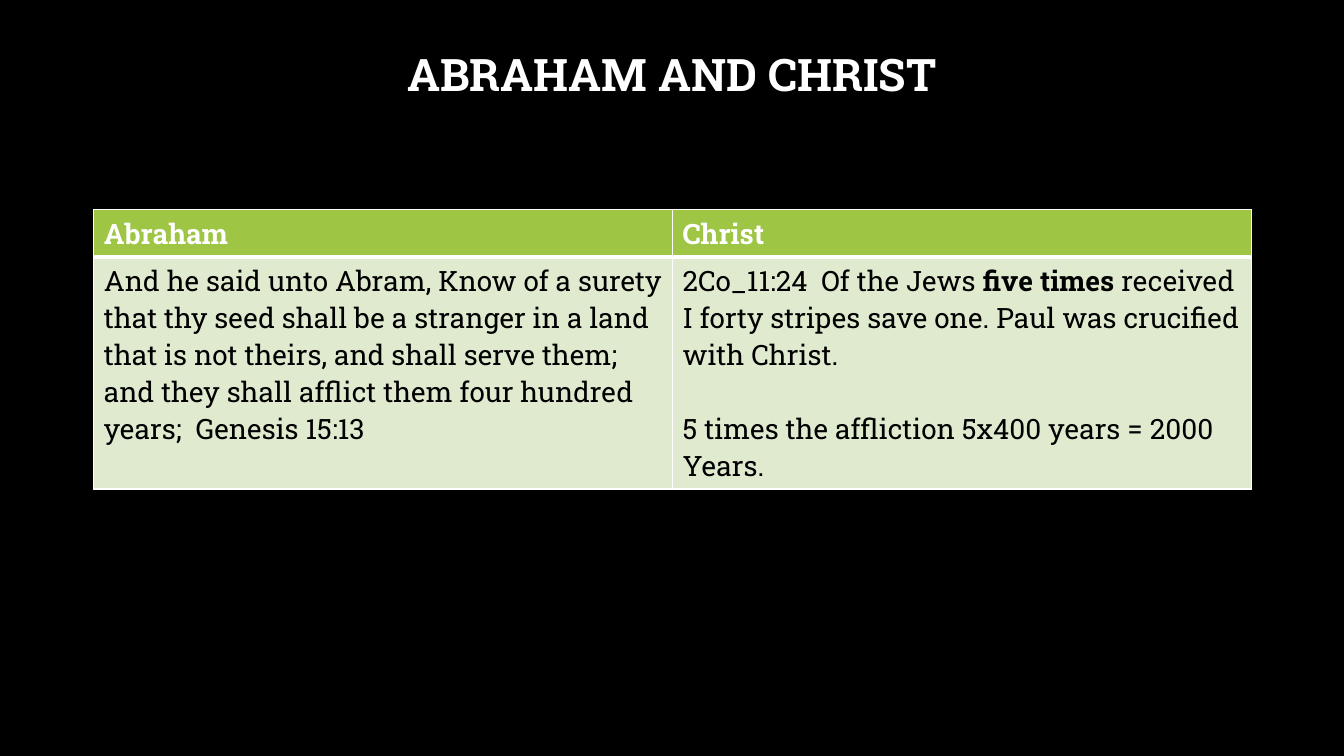
"""Build a slide with a two-column table comparing Abraham and Christ."""
from pptx import Presentation
from pptx.dml.color import RGBColor
from pptx.enum.text import MSO_ANCHOR, MSO_AUTO_SIZE, PP_ALIGN
from pptx.oxml.xmlchemy import OxmlElement
from pptx.util import Inches, Pt

FONT = "Roboto Slab"
COLORS = {"black": "000000", "white": "FFFFFF", "header": "9EC544", "body": "DFEACF"}
HEADERS = ["Abraham", "Christ"]
BODIES = [
    [[("And he said unto Abram, Know of a surety that thy seed shall be a stranger "
       "in a land that is not theirs, and shall serve them; and they shall afflict "
       "them four hundred years;  Genesis 15:13", False)]],
    [[("2Co_11:24  Of the Jews ", False), ("five times ", True),
      ("received I forty stripes save one. Paul was crucified with Christ.", False)],
     [("5 times the affliction 5x400 years = 2000 Years.", False)]],
]


def rgb(name):
    return RGBColor.from_string(COLORS[name])


def add_run(p, text, size, color, bold):
    r = p.add_run()
    r.text = text
    r.font.name = FONT
    r.font.size = Pt(size)
    r.font.bold = bold
    r.font.color.rgb = rgb(color)


def add_title(s, text):
    title = s.shapes.title
    title.left, title.top = Inches(1.36), Inches(0.24)
    title.width, title.height = Inches(10.61), Inches(0.81)
    tf = title.text_frame
    tf.auto_size = MSO_AUTO_SIZE.NONE
    tf.vertical_anchor = MSO_ANCHOR.BOTTOM
    p = tf.paragraphs[0]
    p.alignment = PP_ALIGN.CENTER
    p.line_spacing = 0.9
    add_run(p, text, 32, "white", True)


def set_borders(cell, top, bottom):
    tcPr = cell._tc.get_or_add_tcPr()
    widths = {"a:lnL": 1, "a:lnR": 1, "a:lnT": top, "a:lnB": bottom}
    for position, (tag, width) in enumerate(widths.items()):
        ln = OxmlElement(tag)
        ln.set("w", str(Pt(width)))
        fill = OxmlElement("a:solidFill")
        color = OxmlElement("a:srgbClr")
        color.set("val", COLORS["white"])
        fill.append(color)
        ln.append(fill)
        tcPr.insert(position, ln)


def fill_cell(cell, paragraphs, fill, color, top, bottom):
    cell.fill.solid()
    cell.fill.fore_color.rgb = rgb(fill)
    set_borders(cell, top, bottom)
    tf = cell.text_frame
    for i, runs in enumerate(paragraphs):
        p = tf.add_paragraph() if i else tf.paragraphs[0]
        if i:
            p.space_before = Pt(26.4)
        for text, bold in runs:
            add_run(p, text, 20, color, bold)


def add_comparison(s):
    table = s.shapes.add_table(2, 2, Inches(0.93), Inches(2.08),
                               Inches(11.48), Inches(2.77)).table
    table.rows[0].height = Inches(0.47)
    table.rows[1].height = Inches(2.3)
    for col, (header, body) in enumerate(zip(HEADERS, BODIES)):
        fill_cell(table.cell(0, col), [[(header, True)]], "header", "white", 1, 3)
        fill_cell(table.cell(1, col), body, "body", "black", 3, 1)


def main():
    prs = Presentation()
    prs.slide_width, prs.slide_height = Inches(13.33), Inches(7.5)
    s = prs.slides.add_slide(prs.slide_layouts[0])
    s.background.fill.solid()
    s.background.fill.fore_color.rgb = rgb("black")
    subtitle = s.placeholders[1].element
    subtitle.getparent().remove(subtitle)
    add_title(s, "ABRAHAM AND CHRIST")
    add_comparison(s)
    prs.save("out.pptx")


if __name__ == "__main__":
    main()
